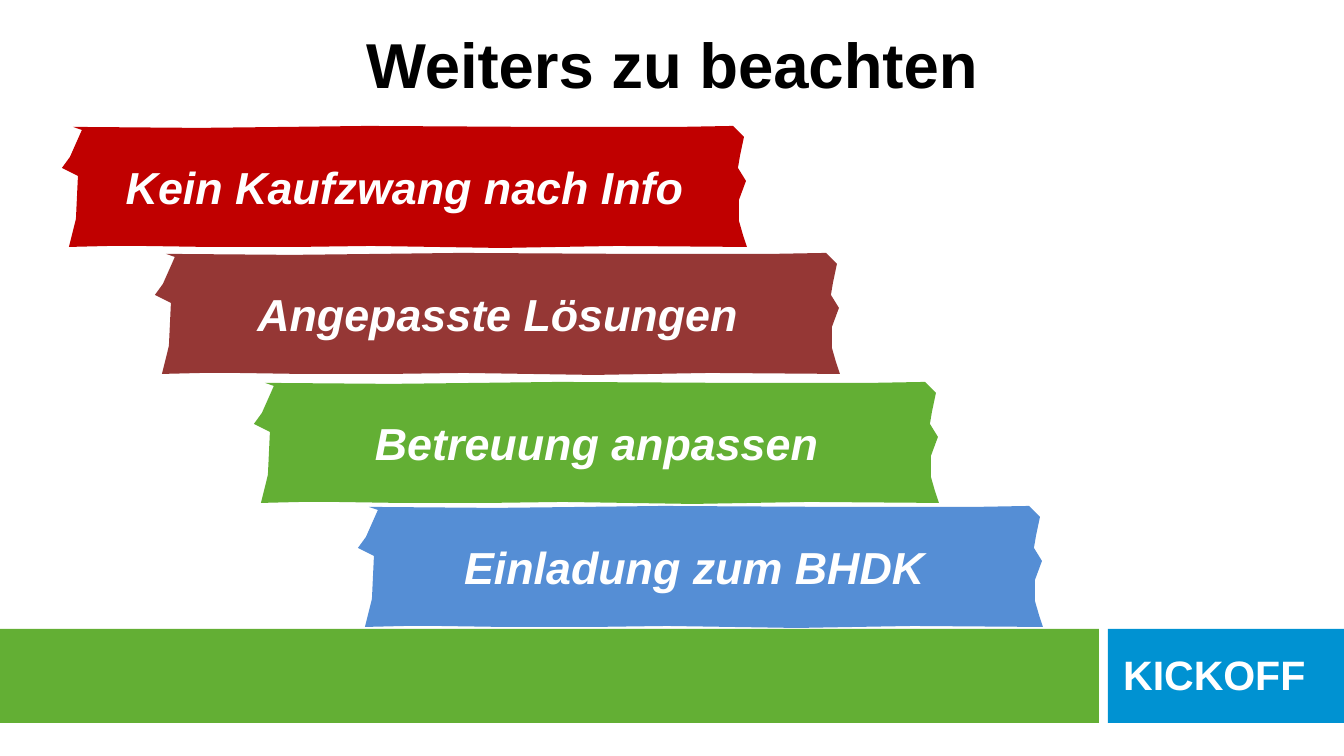
from pptx import Presentation
from pptx.dml.color import RGBColor
from pptx.enum.shapes import MSO_SHAPE
from pptx.enum.text import MSO_ANCHOR, PP_ALIGN
from pptx.util import Inches, Pt

PX = Inches(10) / 1344
FONT = "Arial"
BLACK = RGBColor(0x00, 0x00, 0x00)
WHITE = RGBColor(0xFF, 0xFF, 0xFF)
RED = RGBColor(0xC0, 0x00, 0x00)
BROWN = RGBColor(0x95, 0x37, 0x35)
GREEN = RGBColor(0x63, 0xAF, 0x34)
LIGHT_BLUE = RGBColor(0x55, 0x8E, 0xD5)
BLUE = RGBColor(0x00, 0x92, 0xD2)

TITLE = "Weiters zu beachten"
FOOTER_LABEL = "KICKOFF"
# Text, colour, left and top of each banner
BANNERS = [
    ("Kein Kaufzwang nach Info", RED, 62, 126),
    ("Angepasste Lösungen", BROWN, 155, 253),
    ("Betreuung anpassen", GREEN, 254, 382),
    ("Einladung zum BHDK ", LIGHT_BLUE, 358, 506),
]
# Left, width and colour of each footer block
FOOTER_BLOCKS = [(0, 1099, GREEN), (1108, 236, BLUE)]
FOOTER_TOP, FOOTER_HEIGHT = 629, 94

# Torn paper strip, clockwise, measured from its left and top
TORN_STRIP = [
    (11, 1), (137, 2), (226, 1), (305, 0), (472, 1), (530, 1), (618, 1), (671, 0),
    (682, 11), (678, 30), (676, 42), (684, 55), (677, 74), (677, 95), (681, 109),
    (685, 121), (555, 120), (439, 122), (309, 120), (235, 121), (146, 121),
    (80, 120), (48, 120), (7, 121),
    (14, 93), (16, 50), (0, 42), (8, 31), (20, 4),
]


def px(*lengths):
    return [round(length * PX) for length in lengths]


def paint(shape, color):
    shape.shadow.inherit = False
    shape.fill.solid()
    shape.fill.fore_color.rgb = color
    shape.line.fill.background()


def write(shape, text, size, color, align, anchor, italic=False):
    frame = shape.text_frame
    frame.word_wrap = True
    frame.vertical_anchor = anchor
    frame.text = text
    paragraph = frame.paragraphs[0]
    paragraph.alignment = align
    font = paragraph.runs[0].font
    font.name, font.size, font.bold = FONT, Pt(size), True
    font.color.rgb = color
    if italic:
        font.italic = True
    return paragraph


def add_footer(slide):
    for left, width, color in FOOTER_BLOCKS:
        block = slide.shapes.add_shape(
            MSO_SHAPE.RECTANGLE, *px(left, FOOTER_TOP, width, FOOTER_HEIGHT))
        paint(block, color)
    label = slide.shapes.add_textbox(*px(1110, 652, 234, 54))
    paragraph = write(label, FOOTER_LABEL, 22, WHITE, PP_ALIGN.LEFT, MSO_ANCHOR.TOP)
    paragraph.line_spacing = 0.8


def add_banner(slide, text, color, left, top):
    points = [(left + x, top + y) for x, y in TORN_STRIP]
    builder = slide.shapes.build_freeform(*points[0], scale=PX)
    builder.add_line_segments(points[1:], close=True)
    banner = builder.convert_to_shape()
    paint(banner, color)
    write(banner, text, 24, WHITE, PP_ALIGN.CENTER, MSO_ANCHOR.MIDDLE, italic=True)


def main():
    presentation = Presentation()
    presentation.slide_width, presentation.slide_height = px(1344, 756)
    slide = presentation.slides.add_slide(presentation.slide_layouts[5])

    title = slide.shapes.title
    title.left, title.top, title.width, title.height = px(0, 0, 1344, 126)
    write(title, TITLE, 34, BLACK, PP_ALIGN.CENTER, MSO_ANCHOR.MIDDLE)

    add_footer(slide)
    for banner in BANNERS:
        add_banner(slide, *banner)

    presentation.save("out.pptx")


if __name__ == "__main__":
    main()
